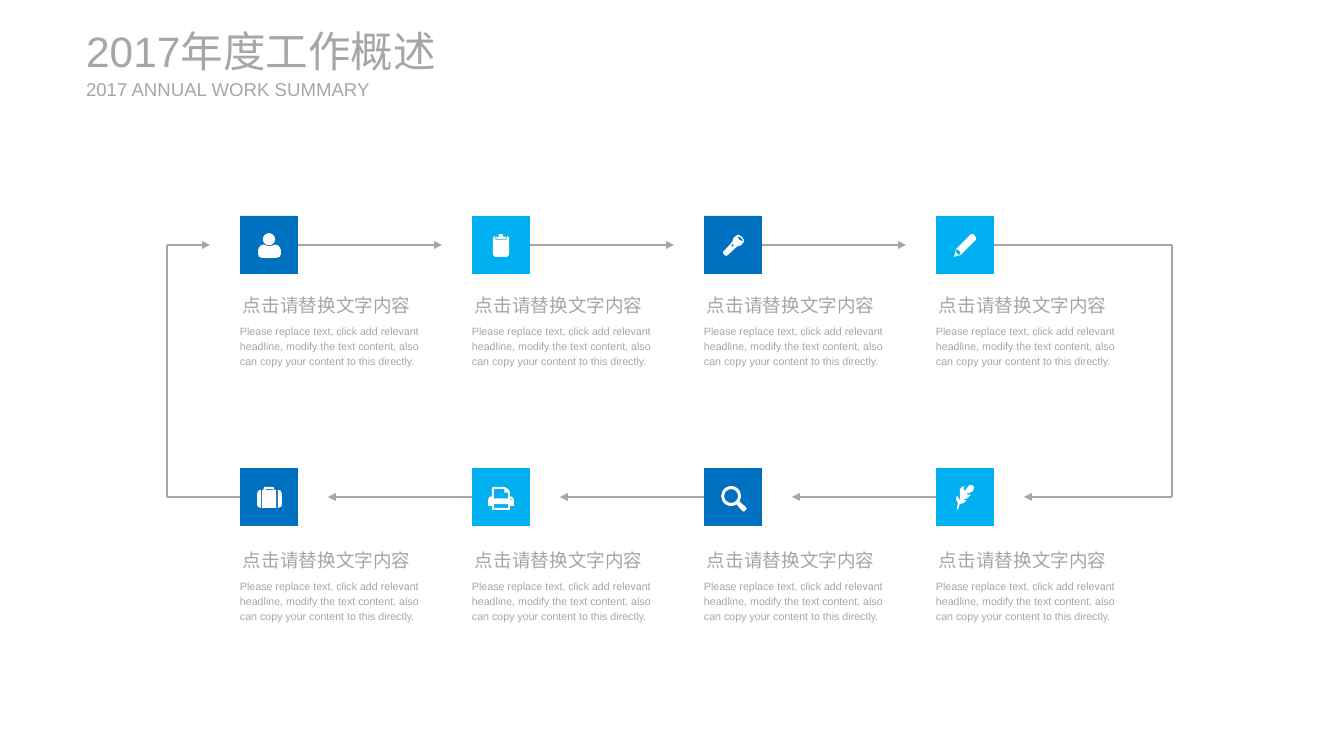
import pptx
import pptx.dml.color
import pptx.enum.shapes
import pptx.enum.text
import pptx.oxml
import pptx.oxml.ns
import pptx.util

RGB = pptx.dml.color.RGBColor
SHAPE = pptx.enum.shapes.MSO_SHAPE
ANCHOR = pptx.enum.text.MSO_ANCHOR

BLUE = RGB(0x00, 0x70, 0xC0)
SKY = RGB(0x00, 0xB0, 0xF0)
GREY = RGB(0xA6, 0xA6, 0xA6)
WHITE = RGB(0xFF, 0xFF, 0xFF)

PX = 9565  # EMU in one px
TILE = 58
TILE_GRID = 61  # icon units across one tile
LEFT, STEP = 240, 232
TOP_ROW, BOTTOM_ROW = 216, 468
ARROW_GAP = 30
LEFT_RAIL, RIGHT_RAIL = 167, 1172

HEADING = "点击请替换文字内容"
BODY = ("Please replace text, click add relevant headline, modify the text "
        "content, also can copy your content to this directly.")

# Icon outlines in tile grid units; inner outlines are holes
USER_BODY = [[(43, 36), (42, 33), (40, 31), (37, 30), (35, 31), (31, 32), (27, 31),
              (25, 30), (22, 31), (20, 33), (19, 36), (19, 40), (20, 43), (23, 44),
              (38, 44), (42, 43), (43, 40)]]
CLIPBOARD = [[(37, 21), (36, 25), (25, 25), (24, 21), (22, 23), (22, 41), (24, 43),
              (37, 43), (39, 41), (39, 23)],
             [(35, 24), (36, 22), (33, 22), (32, 19), (28, 19), (28, 22), (25, 22),
              (26, 24)]]
FLASHLIGHT = [[(40, 22), (37, 20), (35, 20), (31, 23), (30, 27), (20, 38), (21, 41),
               (24, 42), (35, 32), (39, 31), (42, 27), (42, 25)],
              [(37, 25), (35, 21), (39, 23), (42, 27)],
              [(29, 32), (29, 30), (31, 30), (31, 32)]]
PENCIL = [[(41, 21), (39, 19), (37, 19), (21, 35), (19, 43), (26, 41), (35, 32),
           (42, 25), (42, 23)],
          [(26, 40), (23, 41), (22, 39), (21, 38), (21, 36), (22, 35), (25, 37)]]
SUITCASE = [[(19, 24), (18, 27), (18, 39), (19, 41), (22, 42), (22, 23)],
            [(36, 21), (35, 20), (26, 20), (25, 21), (25, 23), (23, 23), (23, 42),
             (38, 42), (38, 23), (36, 23)],
            [(35, 23), (27, 23), (27, 22), (35, 22)],
            [(43, 24), (40, 23), (40, 42), (43, 41), (44, 39), (44, 27)]]
PRINTER = [[(43, 31), (41, 30), (40, 30), (40, 26), (39, 23), (36, 21), (34, 20),
            (22, 20), (21, 21), (21, 30), (20, 30), (18, 31), (17, 33), (17, 40),
            (21, 40), (21, 44), (40, 44), (40, 40), (44, 40), (44, 33)],
           [(38, 32), (23, 32), (23, 22), (34, 22), (34, 26), (38, 26)],
           [(38, 42), (23, 42), (23, 38), (38, 38)],
           [(41, 34), (40, 33), (41, 32), (42, 33)]]
MAGNIFIER_HANDLE = [[(37, 35), (44, 41), (45, 43), (42, 46), (40, 45), (34, 38)]]
FEATHER = [[(23, 44), (25, 38), (29, 37), (32, 34), (28, 33), (33, 32), (37, 28),
            (33, 28), (32, 27), (36, 26), (39, 24), (40, 20), (38, 18), (35, 18),
            (32, 22), (30, 24), (29, 22), (30, 19), (27, 20), (25, 23), (25, 34),
            (22, 29), (21, 33), (23, 37), (22, 43)]]

ROWS = [(TOP_ROW, 290, [USER_BODY, CLIPBOARD, FLASHLIGHT, PENCIL]),
        (BOTTOM_ROW, 545, [SUITCASE, PRINTER, MAGNIFIER_HANDLE, FEATHER])]


class SlidePainter:
    """Holds the style and the current slide."""

    font = "Arial"
    line_width = pptx.util.Pt(1)
    unit = PX * TILE / TILE_GRID

    def __init__(self, slide):
        self.shapes = slide.shapes

    def finish(self, shape, color):
        shape.shadow.inherit = False
        shape.fill.solid()
        shape.fill.fore_color.rgb = color
        shape.line.fill.background()
        return shape

    def tile(self, left, top, color):
        frame = [value * PX for value in (left, top, TILE, TILE)]
        return self.finish(self.shapes.add_shape(SHAPE.RECTANGLE, *frame), color)

    def round_part(self, tile, kind, left, top, size):
        frame = (tile.left + round(left * self.unit), tile.top + round(top * self.unit),
                 round(size * self.unit), round(size * self.unit))
        return self.finish(self.shapes.add_shape(kind, *frame), WHITE)

    def icon(self, tile, outlines):
        builder = self.shapes.build_freeform(*outlines[0][0], scale=self.unit)
        for number, points in enumerate(outlines):
            if number:
                builder.move_to(*points[0])
            builder.add_line_segments(points[1:], close=True)
        self.finish(builder.convert_to_shape(tile.left, tile.top), WHITE)

    def line(self, start, end, arrow=False, source=None, target=None):
        points = [value * PX for value in (*start, *end)]
        line = self.shapes.add_connector(
            pptx.enum.shapes.MSO_CONNECTOR.STRAIGHT, *points)
        line.line.width = self.line_width
        line.line.color.rgb = GREY
        if source:
            line.begin_connect(*source)
        if target:
            line.end_connect(*target)
        if arrow:
            pptx.oxml.ns.qn("a:tailEnd")
            head = pptx.oxml.parse_xml(
                '<a:tailEnd %s type="triangle"/>' % pptx.oxml.ns.nsdecls("a"))
            line.line._get_or_add_ln().append(head)
        line._element.spPr.append(pptx.oxml.parse_xml(
            "<a:effectLst %s/>" % pptx.oxml.ns.nsdecls("a")))

    def text(self, wording, left, top, width, height, size,
             spacing=1.0, anchor=ANCHOR.TOP):
        box = self.shapes.add_textbox(*[value * PX for value in (left, top, width, height)])
        frame = box.text_frame
        frame_format = {"word_wrap": True, "vertical_anchor": anchor,
                        "auto_size": pptx.enum.text.MSO_AUTO_SIZE.SHAPE_TO_FIT_TEXT,
                        "margin_left": 0, "margin_top": 0,
                        "margin_right": 0, "margin_bottom": 0}
        for name, value in frame_format.items():
            setattr(frame, name, value)
        para = frame.paragraphs[0]
        para.line_spacing = spacing
        span = para.add_run()
        span.text = wording
        for name, value in {"name": self.font, "size": pptx.util.Pt(size)}.items():
            setattr(span.font, name, value)
        span.font.color.rgb = GREY


def main():
    deck = pptx.Presentation()
    deck.slide_width, deck.slide_height = 1344 * PX, 756 * PX
    painter = SlidePainter(deck.slides.add_slide(deck.slide_layouts[6]))

    # Title
    painter.text("2017年度工作概述", 86, 25, 413, 52, 32, anchor=ANCHOR.MIDDLE)
    painter.text("2017 ANNUAL WORK SUMMARY", 86, 78, 293, 23, 14, anchor=ANCHOR.MIDDLE)

    # Tiles with icons, headings and texts
    tiles = []
    for top, text_top, icons in ROWS:
        row = []
        for column, outlines in enumerate(icons):
            left = LEFT + column * STEP
            tile = painter.tile(left, top, SKY if column % 2 else BLUE)
            painter.icon(tile, outlines)
            painter.text(HEADING, left + 3, text_top, 238, 25, 14, 1.2)
            painter.text(BODY, left, text_top + 32, 193, 45, 8, 1.2)
            row.append(tile)
        tiles.append(row)
    upper, lower = tiles
    painter.round_part(upper[0], SHAPE.OVAL, 24, 18, 13)
    ring = painter.round_part(lower[2], SHAPE.DONUT, 18, 19, 21)
    ring.adjustments[0] = 0.15

    # Arrows between neighbouring tiles
    top_y, bottom_y = TOP_ROW + TILE // 2, BOTTOM_ROW + TILE // 2
    for column in range(3):
        left = LEFT + column * STEP
        right, following = left + TILE, left + STEP
        painter.line((right, top_y), (following - ARROW_GAP, top_y), True,
                     source=(upper[column], 3))
        painter.line((following, bottom_y), (right + ARROW_GAP, bottom_y), True,
                     source=(lower[column + 1], 1))

    # Loop around both ends
    last_right = LEFT + 3 * STEP + TILE
    painter.line((last_right, top_y), (RIGHT_RAIL, top_y), source=(upper[3], 3))
    painter.line((RIGHT_RAIL, top_y), (RIGHT_RAIL, bottom_y))
    painter.line((RIGHT_RAIL, bottom_y), (last_right + ARROW_GAP, bottom_y), True)
    painter.line((LEFT, bottom_y), (LEFT_RAIL, bottom_y), source=(lower[0], 1))
    painter.line((LEFT_RAIL, bottom_y), (LEFT_RAIL, top_y))
    painter.line((LEFT_RAIL, top_y), (LEFT - ARROW_GAP, top_y), True)

    deck.save("out.pptx")


if __name__ == "__main__":
    main()
